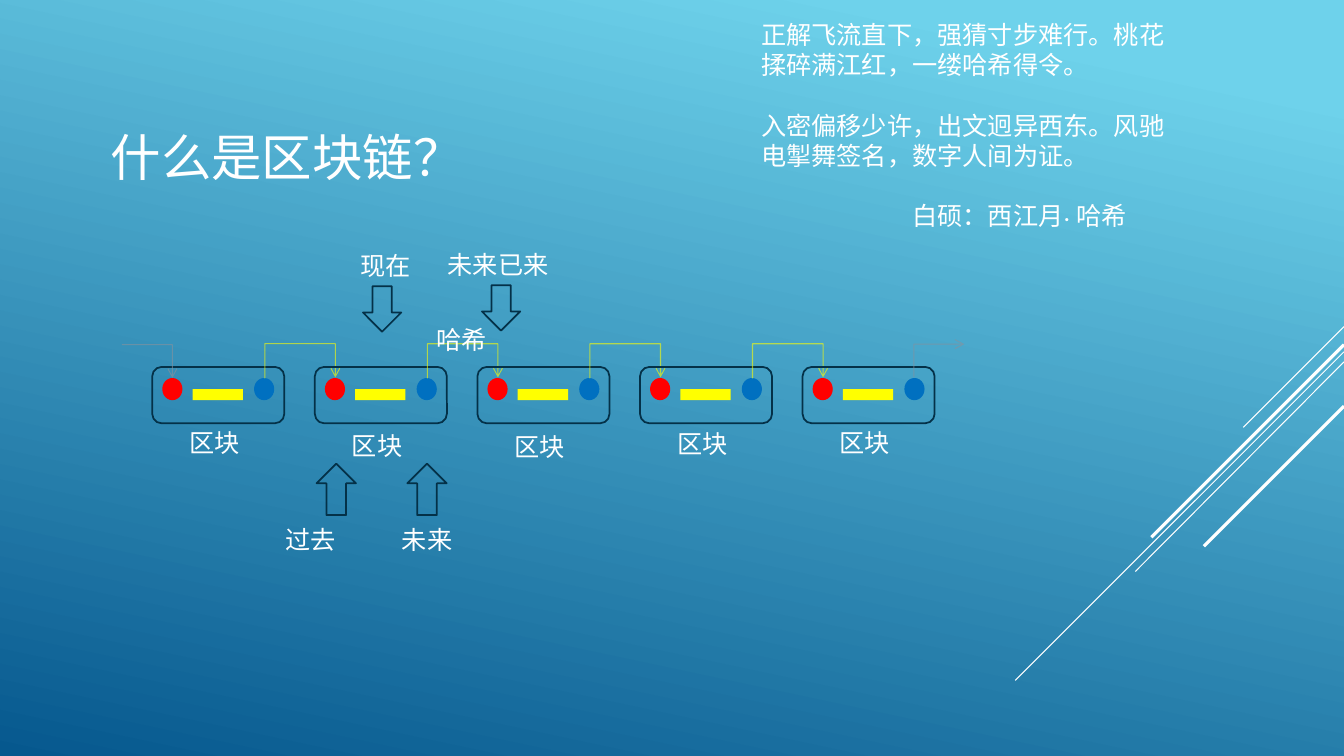
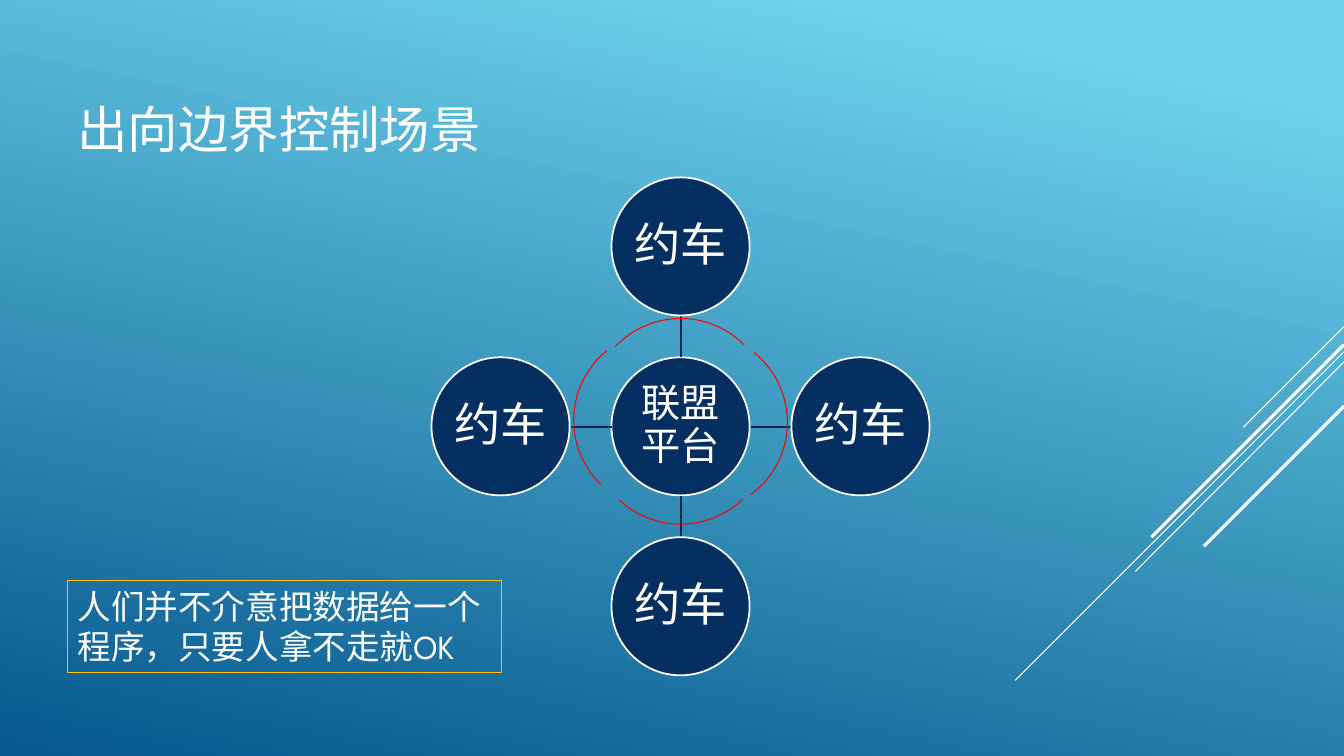
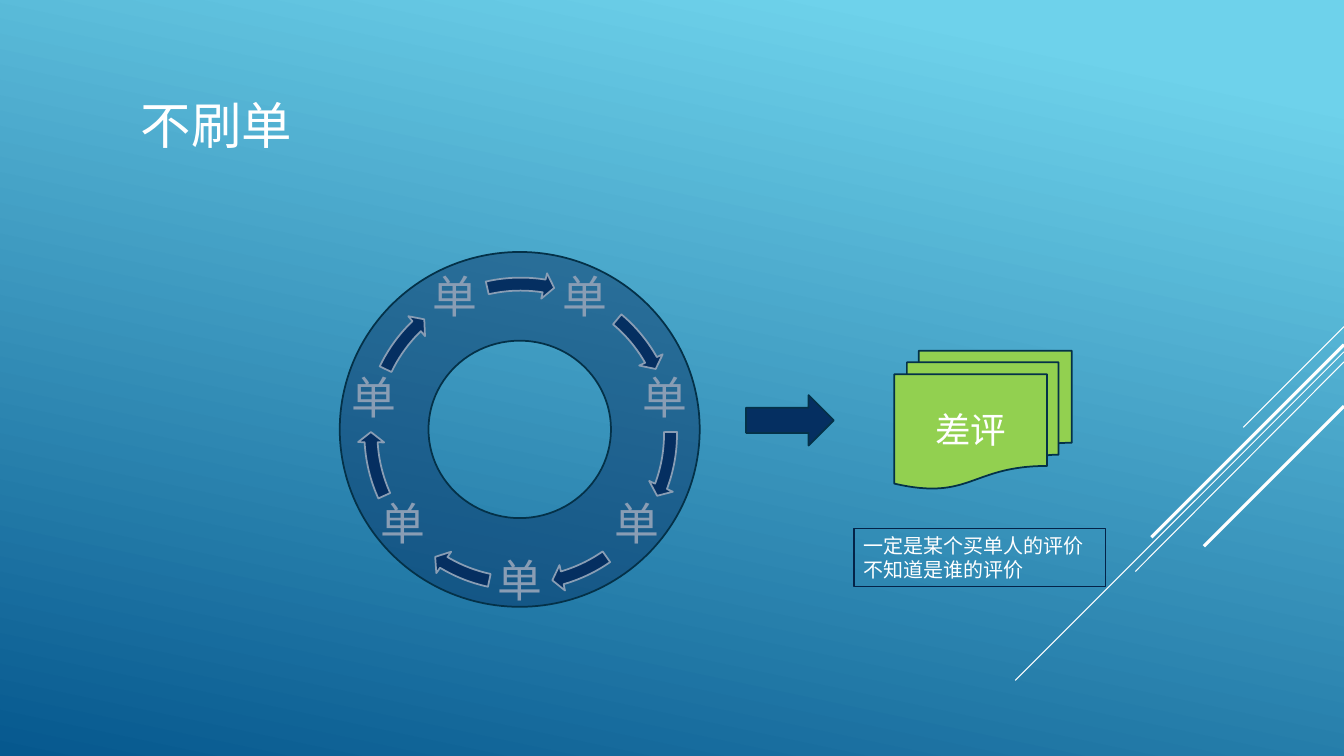
"""Builds three slides on block chains, boundary control and order reviews."""
import math

from lxml import etree
from pptx import Presentation
from pptx import util as u
from pptx.dml import color as colours
from pptx.enum import shapes, text
from pptx.oxml import ns

FONT = "League Spartan"
WHITE, NAVY, OUTLINE = "FFFFFF", "052F61", "043148"
YELLOW, RED, GREY = "FFFF00", "FF0000", "89919C"
SKY = [(0.1, "6ED2EB"), (1, "06588E")]
RAYS = [
    (3.24, 12.33, 4.24, 0.75),
    (3.49, 10.07, 6.75, 0.75),
    (3.59, 11.26, 5.67, 0.75),
    (3.42, 11.42, 5.33, 2.25),
    (4.03, 11.94, 5.42, 2.25),
]
SHAPE = shapes.MSO_SHAPE
CENTRE = text.PP_ALIGN.CENTER
MIDDLE = text.MSO_ANCHOR.MIDDLE


def rgb(value):
    """Return the colour for a hex string."""
    return colours.RGBColor.from_string(value)


def inches(*values):
    """Return lengths in inches."""
    return [u.Inches(value) for value in values]


def add_child(parent, tag, **attributes):
    """Append a drawing element with attributes to an XML parent."""
    child = etree.SubElement(parent, ns.qn(tag))
    for name, value in attributes.items():
        child.set(name, str(value))
    return child


def set_alpha(fill_parent, percent):
    """Make the solid fill under an XML parent partly transparent."""
    colour = fill_parent.find(ns.qn("a:solidFill"))[0]
    add_child(colour, "a:alpha", val=percent * 1000)


def set_frame(shape, **attributes):
    """Set flips or rotation on the frame of a shape."""
    for name, value in attributes.items():
        shape._element.spPr.find(ns.qn("a:xfrm")).set(name, str(value))


def write(shape, lines, size, align=None, paragraph_format=None, **frame_format):
    """Write lines of white text into a shape."""
    frame = shape.text_frame
    frame_values = {"word_wrap": True, "vertical_anchor": text.MSO_ANCHOR.TOP}
    for name, value in {**frame_values, **frame_format}.items():
        setattr(frame, name, value)
    for index, line in enumerate(lines):
        paragraph = frame.paragraphs[0] if index == 0 else frame.add_paragraph()
        paragraph.alignment = align or text.PP_ALIGN.LEFT
        for name, value in (paragraph_format or {}).items():
            setattr(paragraph, name, value)
        run = paragraph.add_run()
        run.text = line
        font_values = {"name": FONT, "size": u.Pt(size)}
        for name, value in font_values.items():
            setattr(run.font, name, value)
        run.font.color.rgb = rgb(WHITE)


def add_text(slide, box, lines, size, align=None, **formats):
    """Add a text box."""
    shape = slide.shapes.add_textbox(*inches(*box))
    write(shape, lines, size, align, **formats)
    return shape


def add_shape(slide, kind, box, fill=None, line=None, width=1.25, adjust=()):
    """Add a flat preset shape, hollow or unlined when no colour is given."""
    shape = slide.shapes.add_shape(kind, *inches(*box))
    shape.shadow.inherit = False
    for index, value in enumerate(adjust):
        shape.adjustments[index] = value
    if fill:
        shape.fill.solid()
        shape.fill.fore_color.rgb = rgb(fill)
    else:
        shape.fill.background()
    if line:
        shape.line.color.rgb = rgb(line)
        shape.line.width = u.Pt(width)
    else:
        shape.line.fill.background()
    return shape


def add_line(slide, start, end, colour, width, kind=shapes.MSO_CONNECTOR.STRAIGHT):
    """Add a connector without a shadow."""
    line = slide.shapes.add_connector(kind, *inches(*start, *end))
    line.line.color.rgb = rgb(colour)
    line.line.width = u.Pt(width)
    add_child(line._element.spPr, "a:effectLst")
    return line


def add_bent_arrow(slide, box, colour, preset, turned=False, bend=None):
    """Add a translucent elbow arrow in its unrotated box."""
    left, top, width, height = box
    arrow = add_line(slide, (left, top), (left + width, top + height), colour, 0.75,
                     shapes.MSO_CONNECTOR.ELBOW)
    if turned:
        set_frame(arrow, rot=90 * 60000, flipH=1, flipV=1)
    geometry = arrow._element.spPr.find(ns.qn("a:prstGeom"))
    geometry.set("prst", preset)
    if bend:
        guides = geometry.find(ns.qn("a:avLst"))
        add_child(guides, "a:gd", name="adj1", fmla=f"val {bend * 100000}")
    line = arrow._element.spPr.find(ns.qn("a:ln"))
    set_alpha(line, 60)
    add_child(line, "a:tailEnd", type="arrow")


def add_slide(presentation, title, box):
    """Add a slide with the corner rays and a title."""
    slide = presentation.slides.add_slide(presentation.slide_layouts[6])
    for top, left, bottom, width in RAYS:
        add_line(slide, (13.33, top), (left, bottom), WHITE, width)
    add_text(slide, box, [title], 36, vertical_anchor=MIDDLE)
    return slide


def add_poem(slide, box):
    """Add the poem with its indented signature."""
    lines = [
        "正解飞流直下，强猜寸步难行。桃花揉碎满江红，一缕哈希得令。",
        "入密偏移少许，出文迥异西东。风驰电掣舞签名，数字人间为证。",
        "白硕：西江月· 哈希",
    ]
    poem = add_text(slide, box, lines, 18)
    for paragraph in poem.text_frame.paragraphs[1:]:
        paragraph.space_before = u.Pt(21.6)
    signature = poem.text_frame.paragraphs[-1]
    signature._p.get_or_add_pPr().set("marL", str(u.Inches(1.5)))


def add_block(slide, box):
    """Add one block with its two hashes and its data bar."""
    left, top, width, height = box
    add_shape(slide, SHAPE.ROUNDED_RECTANGLE, box, line=OUTLINE)
    add_shape(slide, SHAPE.RECTANGLE, (left + 0.4, top + 0.22, 0.5, 0.11), YELLOW)
    for offset, colour in ((0.1, RED), (width - 0.3, "0070C0")):
        add_shape(slide, SHAPE.OVAL, (left + offset, top + 0.11, 0.2, 0.22), colour)


def add_chain(slide, box):
    """Add five linked blocks with their labels and time arrows."""
    left, top, width, height = box
    block_width, count = 1.31, 5
    pitch = (width - block_width) / (count - 1)
    for index, label_top in enumerate((0.55, 0.58, 0.59, 0.56, 0.55)):
        block_left = left + index * pitch
        add_block(slide, (block_left, top, block_width, height))
        add_text(slide, (block_left + 0.27, top + label_top, 1.19, 0.4), ["区块"], 18)
        if index < count - 1:
            middle = block_left + (block_width + pitch) / 2
            add_bent_arrow(slide, (middle, top - 0.24, 0.01, 0.7), YELLOW,
                           "bentConnector3", True, 35)
    add_bent_arrow(slide, (left - 0.3, top - 0.22, 0.5, 0.33), GREY, "bentConnector2")
    add_bent_arrow(slide, (left + width - 0.12, top - 0.31, 0.33, 0.5), GREY,
                   "bentConnector2", True)
    add_text(slide, (left + 2.72, top - 0.47, 0.7, 0.4), ["哈希"], 18)
    down, up = SHAPE.DOWN_ARROW, SHAPE.UP_ARROW
    markers = [
        ("现在", (1.81, -1.21, 1.01, 0.4), down, (2.09, -0.8, 0.38, 0.45)),
        ("未来已来", (2.76, -1.22, 1.34, 0.4), down, (3.27, -0.81, 0.38, 0.45)),
        ("过去", (0.82, 1.51, 1.5, 0.4), up, (1.63, 0.96, 0.39, 0.51)),
        ("未来", (2.22, 1.51, 1.01, 0.4), up, (2.53, 0.96, 0.39, 0.51)),
    ]
    for label, (x, y, *size), kind, (arrow_x, arrow_y, *arrow_size) in markers:
        add_shape(slide, kind, (left + arrow_x, top + arrow_y, *arrow_size), line=OUTLINE)
        add_text(slide, (left + x, top + y, *size), [label], 18, CENTRE)


def add_disc(slide, centre, label, size):
    """Add a labelled disc around a centre."""
    x, y = centre
    disc = add_shape(slide, SHAPE.OVAL, (x - 0.69, y - 0.69, 1.37, 1.37), NAVY, WHITE)
    margins = {f"margin_{side}": u.Inches(0.02)
               for side in ("left", "right", "top", "bottom")}
    write(disc, [label], size, CENTRE, {"line_spacing": 0.9},
          vertical_anchor=MIDDLE, **margins)


def add_hub(slide, box):
    """Add the platform, its four cars and the boundary arcs."""
    left, top, width, height = box
    x, y = left + width / 2, top + height / 2
    reach = width / 2 - 0.69
    add_disc(slide, (x, y), "联盟平台", 28)
    for across, down in ((0, -1), (1, 0), (0, 1), (-1, 0)):
        start, end = [(x + across * far, y + down * far) for far in (0.69, reach - 0.69)]
        add_line(slide, start, end, "04264E", 1.25)
        add_disc(slide, (x + across * reach, y + down * reach), "约车", 33)
    arcs = [
        (1.75, 1.54, 0, {}, (185.27, 32.26)),
        (1.58, 1.66, 90, {}, (189.64, 25.82)),
        (1.41, 1.52, 0, {"flipH": 1}, (185.5, 27.44)),
        (1.58, 1.4, 270, {"flipV": 1}, (188.94, 28.02)),
    ]
    for across, down, angle, flips, adjust in arcs:
        arc = add_shape(slide, SHAPE.ARC, (left + across, top + down, 1.78, 1.78),
                        line=RED, width=0.75, adjust=adjust)
        arc.rotation = angle
        set_frame(arc, **flips)


def add_order_ring(slide, box):
    """Add seven orders in a circle of arrows under a translucent ring."""
    left, top, width, height = box
    x, y, radius = left + width / 2, top + 1.8, 1.48
    sweeps = [(310.1, 330.4), (359.3, 20.5), (55.1, 73.9), (102.1, 120.9),
              (155.6, 176.8), (205.6, 226), (257.1, 279)]
    for index, (start, end) in enumerate(sweeps):
        angle = math.tau * (index + 0.5) / len(sweeps)
        label_x, label_y = x + radius * math.sin(angle), y - radius * math.cos(angle)
        margins = {f"margin_{side}": u.Inches(0.04)
                   for side in ("left", "right", "top", "bottom")}
        add_text(slide, (label_x - 0.31, label_y - 0.31, 0.62, 0.62), ["单"], 32, CENTRE,
                 paragraph_format={"line_spacing": 0.9}, vertical_anchor=MIDDLE, **margins)
        add_shape(slide, SHAPE.CIRCULAR_ARROW, (left + 0.18, top + 0.19, 3.23, 3.23),
                  NAVY, WHITE, adjust=(0.04, 2.35, end * 0.6, start * 0.6, 0.04))
    ring = add_shape(slide, SHAPE.DONUT, box, NAVY, OUTLINE)
    set_alpha(ring._element.spPr, 47)


def add_note(slide, box, lines, size, line):
    """Add an outlined note."""
    write(add_shape(slide, SHAPE.RECTANGLE, box, line=line, width=0.75), lines, size)


def add_review(slide, box):
    """Add the arrow to the bad reviews and the note below them."""
    left, top, width, height = box
    add_shape(slide, SHAPE.RIGHT_ARROW, (left, top + 0.44, 0.87, 0.5), NAVY, OUTLINE)
    papers = add_shape(slide, SHAPE.FLOWCHART_MULTIDOCUMENT,
                       (left + 1.47, top, 1.76, 1.37), "92D050", OUTLINE)
    write(papers, ["差评"], 25.4, CENTRE, vertical_anchor=MIDDLE)
    add_note(slide, (left + 1.07, top + height - 0.58, 2.49, 0.58),
             ["一定是某个买单人的评价", "不知道是谁的评价"], 14.3, "042348")


def main():
    """Build and save the presentation."""
    presentation = Presentation()
    presentation.slide_width, presentation.slide_height = inches(13.33, 7.5)
    sky = presentation.slide_master.background.fill
    sky.gradient()
    sky.gradient_angle = 360 - 102
    for stop, (position, colour) in zip(sky.gradient_stops, SKY):
        stop.position = position
        stop.color.rgb = rgb(colour)

    slide = add_slide(presentation, "什么是区块链？", (1, 0.68, 11.33, 1.75))
    add_poem(slide, (7.45, 0.14, 4.24, 2.22))
    add_chain(slide, (1.51, 3.64, 7.76, 0.56))

    slide = add_slide(presentation, "出向边界控制场景", (0.67, 0.45, 9.33, 1.65))
    add_hub(slide, (4.28, 1.76, 4.95, 4.95))
    add_note(slide, (0.67, 5.76, 4.3, 0.91),
             ["人们并不介意把数据给一个程序，只要人拿不走就OK"], 24, "FFC000")

    slide = add_slide(presentation, "不刷单", (1.3, 0.41, 9.33, 1.65))
    add_order_ring(slide, (3.37, 2.5, 3.57, 3.52))
    add_review(slide, (7.4, 3.48, 3.56, 2.34))

    presentation.save("out.pptx")


if __name__ == "__main__":
    main()
